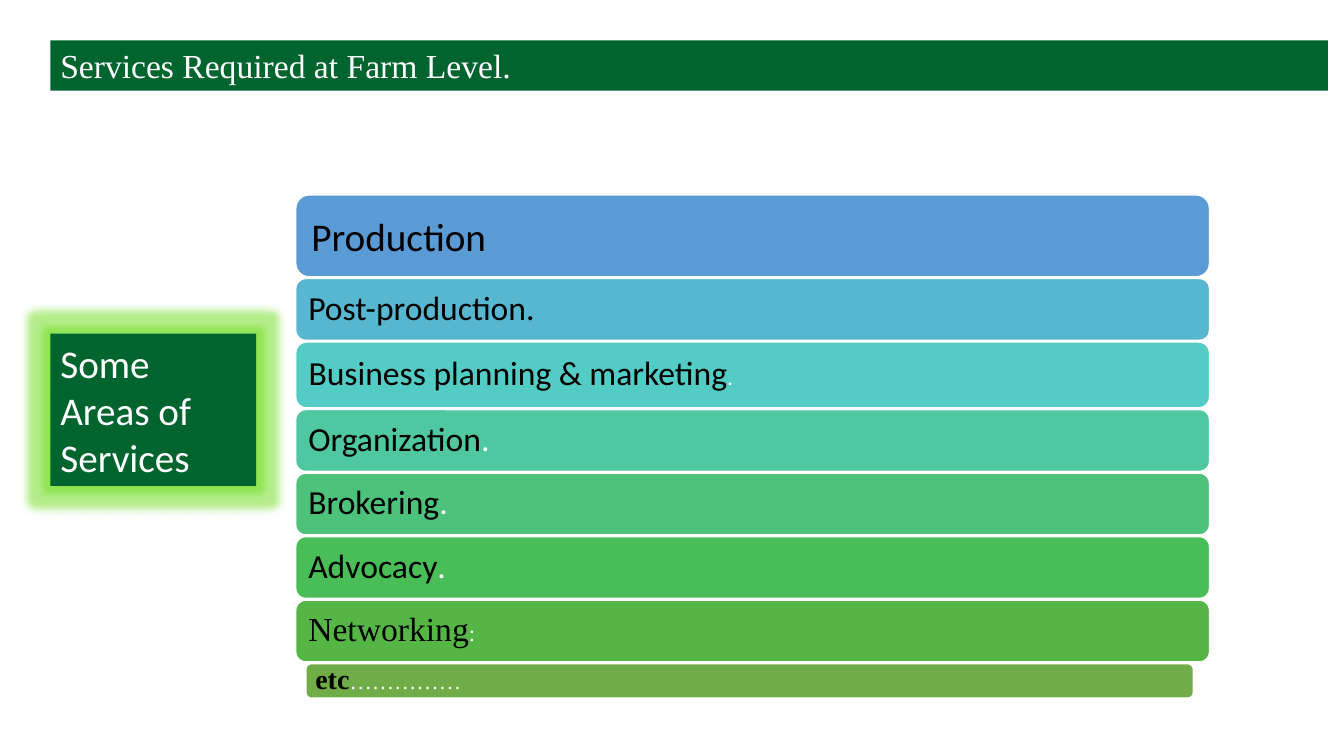
from dataclasses import dataclass

from lxml import etree
from pptx import Presentation
from pptx import util as u
from pptx.dml.color import RGBColor
from pptx.enum import shapes, text
from pptx.oxml import ns


@dataclass(frozen=True)
class Theme:
    banner: str = "00642F"
    glow: str = "6BDC19"
    light: str = "FFFFFF"
    dark: str = "000000"
    sans: str = "Calibri"
    serif: str = "Times New Roman"
    large: int = 28
    medium: int = 24
    small: int = 20
    tiny: int = 16


theme = Theme()


def add_block(kind, frame, fill, inset=None, outline=None):
    """Add a filled shape with left-aligned, middle-anchored text settings."""
    box = page.shapes.add_shape(kind, *[u.Inches(length) for length in frame])
    box.shadow.inherit = False
    box.fill.solid()
    box.fill.fore_color.rgb = RGBColor.from_string(fill)
    if outline:
        box.line.color.rgb = RGBColor.from_string(outline)
        box.line.width = u.Pt(1.5)
    else:
        box.line.fill.background()
    settings = {"word_wrap": True, "vertical_anchor": text.MSO_ANCHOR.MIDDLE}
    if inset is not None:
        for side in ("left", "top", "right", "bottom"):
            settings[f"margin_{side}"] = u.Inches(inset)
    for name, value in settings.items():
        setattr(box.text_frame, name, value)
    return box


def add_span(para, words, size, face, color, bold=False):
    para.alignment = text.PP_ALIGN.LEFT
    span = para.add_run()
    span.text = words
    for name, value in {"size": u.Pt(size), "name": face, "bold": bold}.items():
        setattr(span.font, name, value)
    span.font.color.rgb = RGBColor.from_string(color)


deck = Presentation()
deck.slide_width, deck.slide_height = u.Inches(13.33), u.Inches(7.5)
page = deck.slides.add_slide(deck.slide_layouts[6])

# Service bars: label, ending, ending size, label size, face, height, fill
services = [
    ("Production", "", 0, theme.large, theme.sans, 0.82, "5B9BD5"),
    ("Post-production.", "", 0, theme.medium, theme.sans, 0.62, "57B7D1"),
    ("Business planning & marketing", ".", theme.tiny, theme.medium, theme.sans, 0.66, "53CCC5"),
    ("Organization", ".", theme.medium, theme.medium, theme.sans, 0.62, "4FC7A0"),
    ("Brokering", ".", theme.medium, theme.medium, theme.sans, 0.62, "4CC27B"),
    ("Advocacy", ".", theme.medium, theme.medium, theme.sans, 0.62, "48BD58"),
    ("Networking", ":", theme.tiny, theme.medium, theme.serif, 0.62, "55B646"),
    ("etc", "……………", theme.tiny, theme.small, theme.serif, 0.35, "70AD47"),
]
insets = {theme.large: 0.12, theme.medium: 0.1, theme.small: 0.08}
gap = 0.01
top = 1.93
for label, ending, ending_size, size, face, height, fill in services:
    last = label == "etc"
    left, width = (3.03, 8.81) if last else (2.93, 9.07)
    bar = add_block(shapes.MSO_SHAPE.ROUNDED_RECTANGLE, (left, top, width, height),
                    fill, insets[size], theme.light)
    para = bar.text_frame.paragraphs[0]
    para.line_spacing = 1.0 if size == theme.large else 0.9
    add_span(para, label, size, face, theme.dark, last)
    if ending:
        add_span(para, ending, ending_size, face, theme.light)
    top += height + gap

title = add_block(shapes.MSO_SHAPE.RECTANGLE, (0.5, 0.4, 12.67, 0.5), theme.banner)
add_span(title.text_frame.paragraphs[0], "Services Required at Farm Level.",
         theme.medium, theme.serif, theme.light)

areas = add_block(shapes.MSO_SHAPE.RECTANGLE, (0.5, 3.31, 2.04, 1.51), theme.banner)
for index, words in enumerate(("Some Areas of", "Services")):
    frame = areas.text_frame
    para = frame.add_paragraph() if index else frame.paragraphs[0]
    add_span(para, words, theme.large, theme.sans, theme.light)

effects = areas._element.spPr.find(ns.qn("a:effectLst"))
glow = etree.SubElement(effects, ns.qn("a:glow"), rad=str(u.Pt(11)))
tint = etree.SubElement(glow, ns.qn("a:srgbClr"), val=theme.glow)
etree.SubElement(tint, ns.qn("a:alpha"), val="50000")

deck.save("out.pptx")
